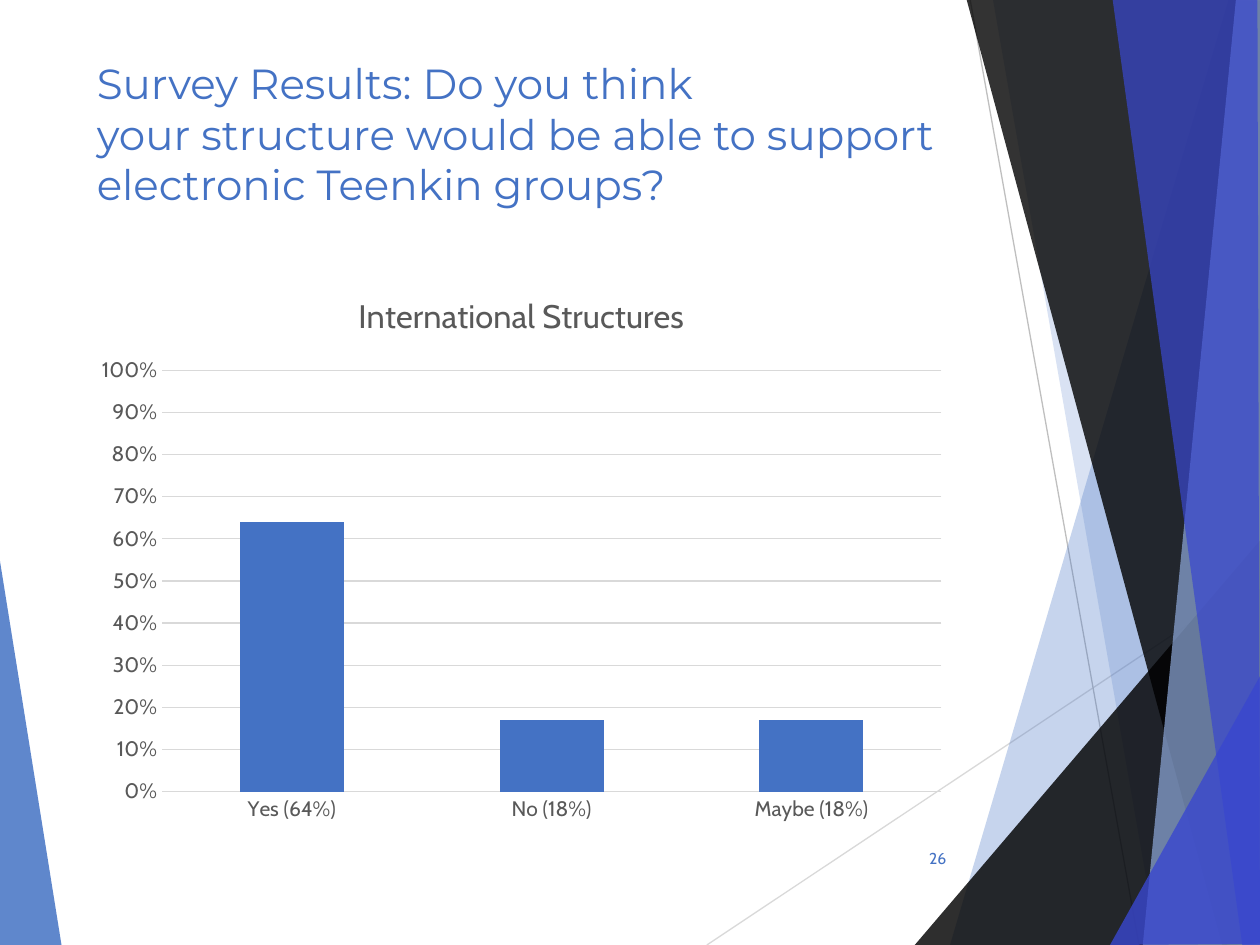
from dataclasses import dataclass

from lxml.etree import SubElement
from pptx import Presentation
from pptx.chart.data import CategoryChartData
from pptx.dml.color import RGBColor
from pptx.enum.chart import XL_CHART_TYPE, XL_TICK_MARK
from pptx.enum.text import MSO_ANCHOR, PP_ALIGN
from pptx.oxml.ns import qn
from pptx.util import Pt

PX = 9144  # EMU per px, 100 px to the inch
BLUE = RGBColor(0x44, 0x72, 0xC4)
PALE_BLUE = RGBColor(0x8F, 0xAA, 0xDC)
INDIGO = RGBColor(0x39, 0x47, 0xCF)
BLACK = RGBColor(0, 0, 0)
DARK_GRAY = RGBColor(0x59, 0x59, 0x59)
MID_GRAY = RGBColor(0xBF, 0xBF, 0xBF)
LIGHT_GRAY = RGBColor(0xD9, 0xD9, 0xD9)
HEAD_FONT, BODY_FONT = "Montserrat", "Cabin"


@dataclass
class Facet:
    points: list[tuple[int, int]]
    color: RGBColor
    opacity: int  # percent


@dataclass
class Ray:
    start: tuple[int, int]
    end: tuple[int, int]
    color: RGBColor


LEFT_FACET = Facet([(-1, 439), (49, 751), (-1, 750)], BLUE, 85)
RAYS = [
    Ray((561, 750), (1001, 457), LIGHT_GRAY),
    Ray((770, 0), (904, 750), MID_GRAY),
]
RIGHT_FACETS = [
    Facet([(975, 0), (754, 750), (1002, 751), (1001, 1)], BLUE, 30),
    Facet([(788, -1), (919, 750), (1001, 750), (1001, -1)], BLUE, 20),
    Facet([(726, 750), (1000, 429), (1001, 750)], BLACK, 82),
    Facet([(767, -1), (970, 750), (1001, 749), (1001, -1)], BLACK, 80),
    Facet([(981, -1), (907, 750), (1001, 750), (1000, -1)], PALE_BLUE, 70),
    Facet([(883, -1), (986, 750), (1000, 750), (998, -1)], INDIGO, 70),
    Facet([(881, 750), (1001, 535), (1001, 749)], INDIGO, 80),
]


def style_font(font, name: str, size: float, color: RGBColor) -> None:
    font.name, font.size, font.bold = name, Pt(size), False
    font.color.rgb = color


def draw_facet(s, facet: Facet) -> None:
    fb = s.shapes.build_freeform(*facet.points[0], scale=PX)
    fb.add_line_segments(facet.points[1:], close=True)
    sp = fb.convert_to_shape()
    sp.shadow.inherit = False
    sp.line.fill.background()
    sp.fill.solid()
    sp.fill.fore_color.rgb = facet.color
    clr = sp._element.spPr.find(qn("a:solidFill"))[0]
    SubElement(clr, qn("a:alpha")).set("val", str(facet.opacity * 1000))


def draw_ray(s, ray: Ray) -> None:
    ends = [v * PX for v in ray.start + ray.end]
    cxn = s.shapes.add_connector(1, *ends)
    cxn.line.color.rgb = ray.color
    cxn.line.width = Pt(0.75)
    SubElement(cxn._element.spPr, qn("a:effectLst"))


def add_text(s, box: tuple[int, int, int, int], lines: list[str], font: str, size: int,
             align: PP_ALIGN, anchor: MSO_ANCHOR) -> None:
    tf = s.shapes.add_textbox(*(v * PX for v in box)).text_frame
    tf.word_wrap = True
    tf.vertical_anchor = anchor
    p = tf.paragraphs[0]
    p.alignment = align
    for i, line in enumerate(lines):
        if i:
            p.add_line_break()
        r = p.add_run()
        r.text = line
        style_font(r.font, font, size, BLUE)


def add_survey_chart(s, box: tuple[int, int, int, int]) -> None:
    name = "International Structures"
    data = CategoryChartData(number_format="0%")
    data.categories = ["Yes (64%)", "No (18%)", "Maybe (18%)"]
    data.add_series(name, [0.64, 0.17, 0.17])
    chart = s.shapes.add_chart(
        XL_CHART_TYPE.COLUMN_CLUSTERED, *(v * PX for v in box), data).chart
    style_font(chart.font, BODY_FONT, 10, BLACK)
    chart.has_legend = False

    # Chart title
    chart.has_title = True
    chart.chart_title.include_in_layout = False
    r = chart.chart_title.text_frame.paragraphs[0].add_run()
    r.text = name
    style_font(r.font, BODY_FONT, 18.6, DARK_GRAY)

    # Columns
    plot = chart.plots[0]
    plot.gap_width = 150
    plot.vary_by_categories = False
    fill = plot.series[0].format.fill
    fill.solid()
    fill.fore_color.rgb = BLUE

    # Axes
    for axis in (chart.category_axis, chart.value_axis):
        axis.major_tick_mark = axis.minor_tick_mark = XL_TICK_MARK.NONE
        axis.format.line.fill.background()
        style_font(axis.tick_labels.font, BODY_FONT, 12, DARK_GRAY)
    values = chart.value_axis
    values.minimum_scale, values.maximum_scale, values.major_unit = 0, 1, 0.1
    values.tick_labels.number_format = "0%"
    values.tick_labels.number_format_is_linked = False
    values.has_major_gridlines = True
    grid = values.major_gridlines.format.line
    grid.color.rgb = LIGHT_GRAY
    grid.width = Pt(0.75)


def main() -> None:
    prs = Presentation()
    prs.slide_width, prs.slide_height = 1000 * PX, 750 * PX
    s = prs.slides.add_slide(prs.slide_layouts[6])

    # Background facets and rays
    draw_facet(s, LEFT_FACET)
    for ray in RAYS:
        draw_ray(s, ray)
    for facet in RIGHT_FACETS:
        draw_facet(s, facet)

    # Title, chart and slide number
    add_text(s, (67, 41, 694, 144),
             ["Survey Results: Do you think",
              "your structure would be able to support electronic Teenkin groups?"],
             HEAD_FONT, 24, PP_ALIGN.LEFT, MSO_ANCHOR.TOP)
    add_survey_chart(s, (67, 214, 694, 447))
    add_text(s, (705, 661, 56, 40), ["26"], BODY_FONT, 9, PP_ALIGN.RIGHT, MSO_ANCHOR.MIDDLE)

    prs.save("out.pptx")


if __name__ == "__main__":
    main()
